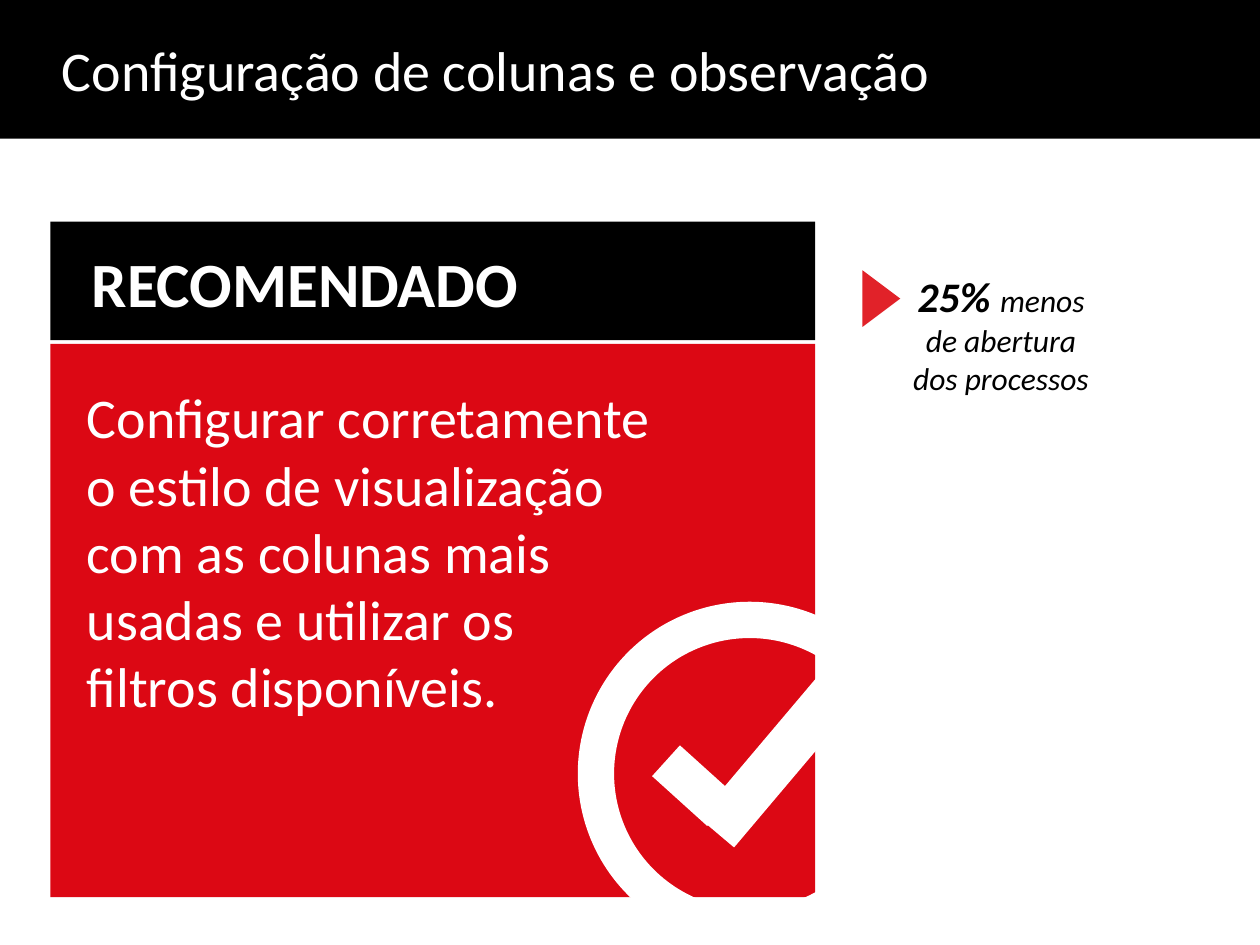
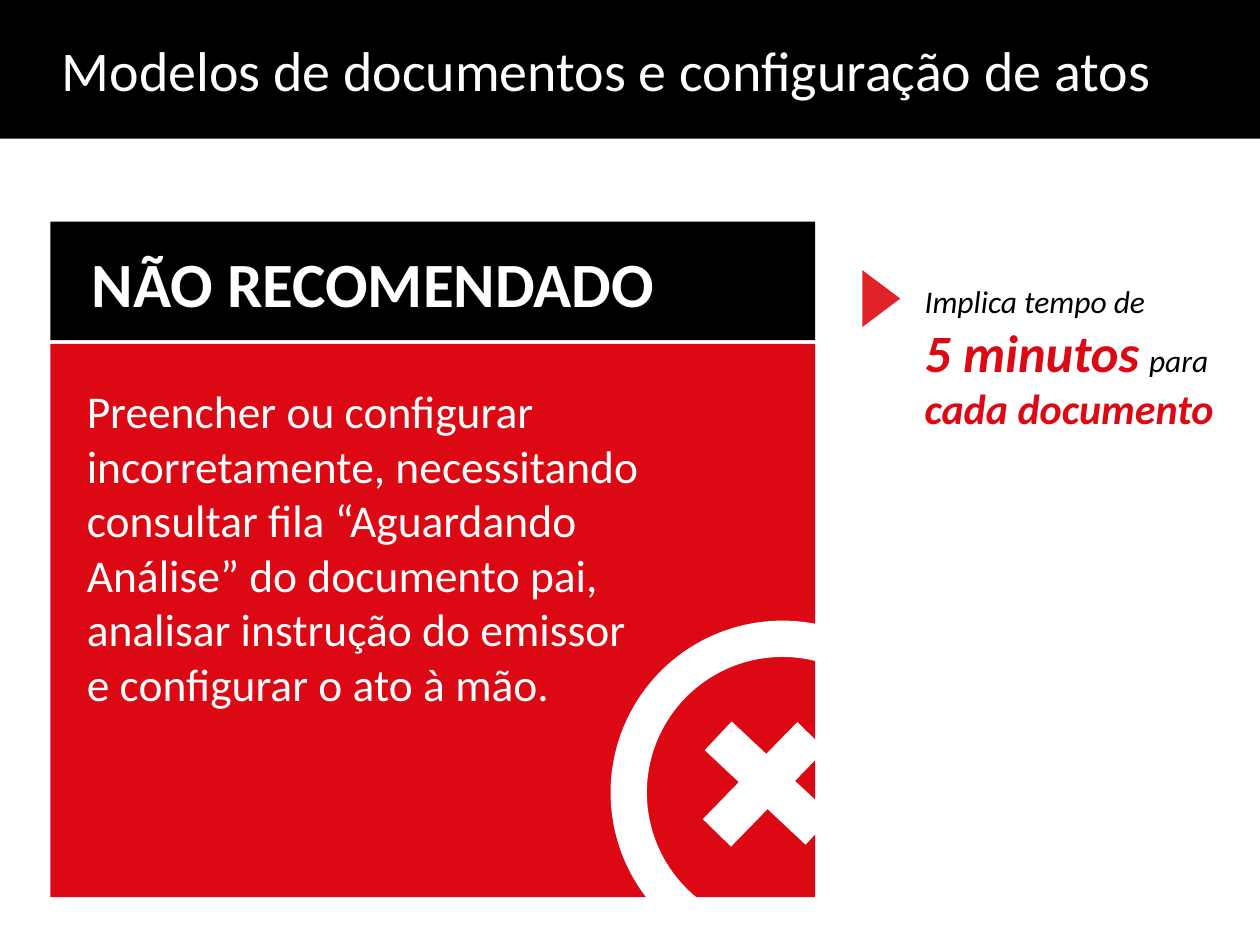
from collections import namedtuple

from lxml.etree import SubElement
from pptx import Presentation
from pptx.dml.color import RGBColor
from pptx.enum.shapes import MSO_CONNECTOR as Connector, MSO_SHAPE as Shape
from pptx.enum.text import MSO_ANCHOR as Anchor, PP_ALIGN as Align
from pptx.oxml.ns import qn
from pptx.util import Inches, Pt

BLACK, WHITE, RED, ARROW_RED = "000000", "FFFFFF", "DC0814", "E12229"
FONT = "Calibri"

Box = namedtuple("Box", "left top width height")
Span = namedtuple("Span", "text size color bold", defaults=(None, None, None))

BAND = Box(0, 0, 10, 1.1)
CARD = Box(0.4, 1.76, 6.07, 5.36)
HEADER_HEIGHT, HEADER_GAP = 0.94, 0.03
ARROW = Box(6.77, 2.22, 0.45, 0.3)


def rgb(color):
    """Turn a hex string into a colour."""
    return RGBColor.from_string(color)


def inside(box, left, top, width, height):
    """Return a box whose offsets are measured from another box."""
    return Box(box.left + left, box.top + top, width, height)


def add_figure(page, kind, box, fill=None, rotation=0):
    """Add a preset shape without shadow or outline."""
    figure = page.shapes.add_shape(kind, *map(Inches, box))
    figure.shadow.inherit = False
    figure.rotation = rotation
    figure.line.fill.background()
    if fill:
        figure.fill.solid()
        figure.fill.fore_color.rgb = rgb(fill)
    else:
        figure.fill.background()
    return figure


def style_font(font, size=None, color=None, bold=None, italic=None):
    """Apply the given font settings and leave the others inherited."""
    if size:
        font.size = Pt(size)
    if color:
        font.color.rgb = rgb(color)
    if bold is not None:
        font.bold = bold
    if italic is not None:
        font.italic = italic


def write(frame, paragraphs, size, color, bold=None, italic=None, align=Align.LEFT):
    """Fill a text frame with paragraphs made of spans."""
    frame.word_wrap = True
    for index, spans in enumerate(paragraphs):
        para = frame.add_paragraph() if index else frame.paragraphs[0]
        para.alignment = align
        para.font.name = FONT
        style_font(para.font, size, color, bold, italic)
        for span in spans:
            for number, line in enumerate(span.text.split("\n")):
                if number:
                    para.add_line_break()
                if line:
                    run = para.add_run()
                    run.text = line
                    style_font(run.font, span.size, span.color, span.bold)


def add_text(page, box, paragraphs, size, color, **style):
    """Add a wrapping text box."""
    frame = page.shapes.add_textbox(*map(Inches, box)).text_frame
    write(frame, paragraphs, size, color, **style)


def add_title_band(page, title):
    """Draw the black band that holds the slide title."""
    frame = add_figure(page, Shape.RECTANGLE, BAND, BLACK).text_frame
    frame.margin_left = Inches(0.49)
    frame.vertical_anchor = Anchor.MIDDLE
    write(frame, [[Span(title)]], 32, WHITE)


def add_card(page, box, heading, advice, size, advice_width, add_mark):
    """Draw the advice card with its heading, mark and text."""
    body_top = HEADER_HEIGHT + HEADER_GAP
    header = inside(box, 0, 0, box.width, HEADER_HEIGHT)
    body = inside(box, 0, body_top, box.width, box.height - body_top)
    add_figure(page, Shape.RECTANGLE, header, BLACK)
    add_figure(page, Shape.RECTANGLE, body, RED)
    add_text(page, inside(header, 0.23, 0.13, 5.3, 0.7),
             [[Span(heading)]], 36, WHITE, bold=True)
    add_mark(page, body)
    add_text(page, inside(body, 0.19, 0.26, advice_width, 2.75),
             [[Span(advice)]], size, WHITE)


def add_ring(page, box):
    """Draw the white ring around a mark."""
    ring = add_figure(page, Shape.OVAL, box)
    ring.line.color.rgb = rgb(WHITE)
    ring.line.width = Pt(20.75)


def add_check(page, body):
    """Draw a ringed check mark in the corner of the card body."""
    ring = inside(body, 4.33, 2.19, 2.44, 2.44)
    add_ring(page, ring)
    add_figure(page, Shape.RECTANGLE, inside(ring, 0.61, 1.02, 0.33, 0.59), WHITE, 312.1)
    add_figure(page, Shape.RECTANGLE, inside(ring, 1.38, 0.02, 0.37, 1.89), WHITE, 40.2)


def add_cross(page, body):
    """Draw a ringed cross in the corner of the card body."""
    ring = inside(body, 4.59, 2.34, 2.44, 2.44)
    add_ring(page, ring)
    for start, end in (((0.71, 0.77), (1.51, 1.52)), ((1.45, 0.77), (0.7, 1.54))):
        points = [Inches(origin + offset) for point in (start, end)
                  for origin, offset in zip(ring[:2], point)]
        stroke = page.shapes.add_connector(Connector.STRAIGHT, *points)
        stroke.line.color.rgb = rgb(WHITE)
        stroke.line.width = Pt(22.5)
        SubElement(stroke.element.spPr, qn("a:effectLst"))


def add_note(page, box, paragraphs, align):
    """Draw the arrow and the side note."""
    add_figure(page, Shape.ISOSCELES_TRIANGLE, ARROW, ARROW_RED, 90)
    add_text(page, box, paragraphs, 18, BLACK, italic=True, align=align)


def add_advice_slide(deck, title, card, note):
    """Build one slide from its title, card and note."""
    page = deck.slides.add_slide(deck.slide_layouts[6])
    add_title_band(page, title)
    add_card(page, CARD, *card)
    add_note(page, *note)


def main():
    """Build and save the deck."""
    deck = Presentation()
    deck.slide_width, deck.slide_height = Inches(10), Inches(7.5)
    add_advice_slide(
        deck,
        "Configuração de colunas e observação",
        ("RECOMENDADO",
         "Configurar corretamente o estilo de visualização com as colunas mais "
         "usadas e utilizar os\nfiltros disponíveis.",
         32, 4.83, add_check),
        (Box(7.08, 2.1, 1.73, 1.11),
         [[Span("25% ", 24, bold=True), Span("menos")],
          [Span("de abertura")],
          [Span("dos processos")]],
         Align.CENTER),
    )
    add_advice_slide(
        deck,
        "Modelos de documentos e configuração de atos",
        ("NÃO RECOMENDADO",
         "Preencher ou configurar incorretamente, necessitando consultar fila "
         "“Aguardando Análise” do documento pai, analisar instrução do emissor "
         "e configurar o ato à mão.",
         26, 4.59, add_cross),
        (Box(7.24, 2.19, 2.51, 1.62),
         [[Span("Implica tempo de\n"),
           Span("5 minutos", 30, RED, True),
           Span(" ", 24, RED, True),
           Span("para "),
           Span("cada documento", 24, RED, True)]],
         Align.LEFT),
    )
    deck.save("out.pptx")


if __name__ == "__main__":
    main()
